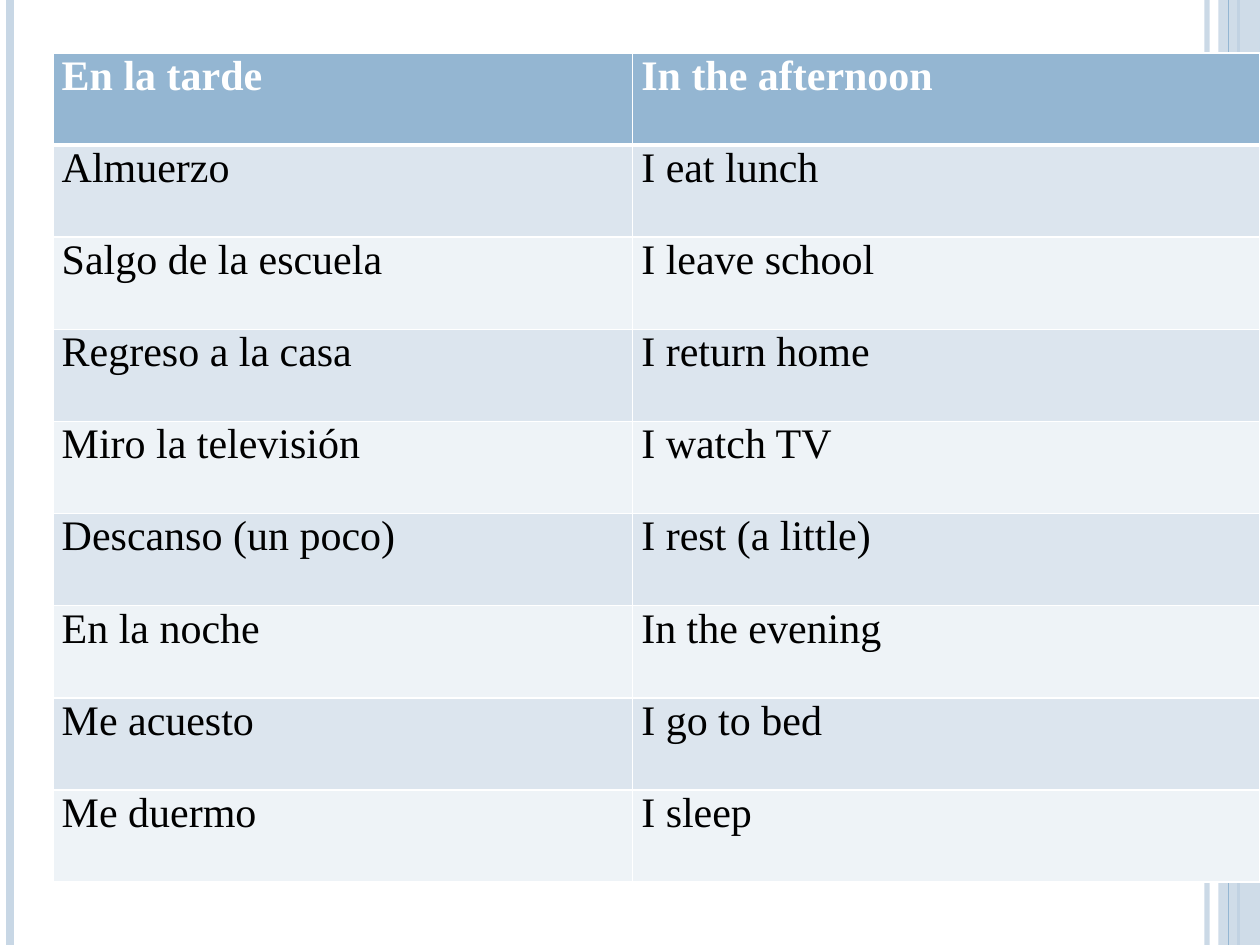
from dataclasses import dataclass

import pptx
import pptx.dml.color
import pptx.enum.shapes
import pptx.oxml
import pptx.oxml.ns
import pptx.oxml.xmlchemy
import pptx.util
from pptx.util import Inches


@dataclass(frozen=True)
class Theme:
    font: str = "Times New Roman"
    size: float = 24
    blue: str = "94B6D2"
    pale: str = "C8D7E5"
    dark: str = "DCE5EE"
    light: str = "EEF3F7"
    white: str = "FFFFFF"
    black: str = "000000"
    thin: float = 1
    thick: float = 3


@dataclass(frozen=True)
class Stripe:
    x: float
    color: str
    width: float
    alpha: int = 100


THEME = Theme()
HIGH = 7.5
BACK = [
    Stripe(9.58, THEME.pale, 3, 93),
    Stripe(0.08, THEME.pale, 4.5),
    Stripe(9.83, THEME.blue, 1.5),
]
FRONT = Stripe(9.75, THEME.blue, 0.75)
WORDS = [
    ("En la tarde", "In the afternoon"),
    ("Almuerzo", "I eat lunch"),
    ("Salgo de la escuela", "I leave school"),
    ("Regreso a la casa", "I return home"),
    ("Miro la televisión", "I watch TV"),
    ("Descanso (un poco)", "I rest (a little)"),
    ("En la noche", "In the evening"),
    ("Me acuesto", "I go to bed"),
    ("Me duermo", "I sleep"),
]
COLS = (4.6, 4.98)


def rgb(color: str) -> pptx.dml.color.RGBColor:
    return pptx.dml.color.RGBColor.from_string(color)


def fade(shape, alpha: int) -> None:
    """Set the opacity, in percent, of the shape's first colour."""
    color = next(shape._element.spPr.iter(pptx.oxml.ns.qn("a:srgbClr")))
    node = pptx.oxml.xmlchemy.OxmlElement("a:alpha")
    node.set("val", str(alpha * 1000))
    color.append(node)


def draw_stripe(slide, stripe: Stripe) -> None:
    x = Inches(stripe.x)
    line = slide.shapes.add_connector(
        pptx.enum.shapes.MSO_CONNECTOR.STRAIGHT, x, 0, x, Inches(HIGH))
    line.line.color.rgb = rgb(stripe.color)
    line.line.width = pptx.util.Pt(stripe.width)
    line._element.spPr.append(pptx.oxml.xmlchemy.OxmlElement("a:effectLst"))
    if stripe.alpha < 100:
        fade(line, stripe.alpha)


def draw_band(slide) -> None:
    band = slide.shapes.add_shape(
        pptx.enum.shapes.MSO_SHAPE.RECTANGLE,
        Inches(9.67), 0, Inches(0.33), Inches(HIGH))
    band.shadow.inherit = False
    band.fill.solid()
    band.fill.fore_color.rgb = rgb(THEME.pale)
    band.line.fill.background()
    fade(band, 87)


def add_edge(cell, side: str, width: float) -> None:
    ns = pptx.oxml.ns.nsdecls("a")
    cell._tc.get_or_add_tcPr().append(pptx.oxml.parse_xml(
        f'<a:ln{side} {ns} w="{int(pptx.util.Pt(width))}"><a:solidFill>'
        f'<a:srgbClr val="{THEME.white}"/></a:solidFill></a:ln{side}>'))


def fill_cell(cell, text: str, row: int) -> None:
    head = row == 0
    cell.margin_left = cell.margin_right = Inches(0.07)
    cell.margin_top = cell.margin_bottom = 0
    for side in "LRTB":
        rule = (row, side) in ((0, "B"), (1, "T"))
        add_edge(cell, side, THEME.thick if rule else THEME.thin)
    cell.fill.solid()
    shade = THEME.dark if row % 2 else THEME.light
    cell.fill.fore_color.rgb = rgb(THEME.blue if head else shade)
    run = cell.text_frame.paragraphs[0].add_run()
    run.text = text
    run.font.name = THEME.font
    run.font.size = pptx.util.Pt(THEME.size)
    run.font.bold = head
    run.font.color.rgb = rgb(THEME.white if head else THEME.black)


def draw_table(slide) -> None:
    high = Inches(6.58)
    table = slide.shapes.add_table(
        len(WORDS), len(COLS), Inches(0.42), Inches(0.42),
        Inches(sum(COLS)), high).table
    for col, width in zip(table.columns, COLS):
        col.width = Inches(width)
    for i, pair in enumerate(WORDS):
        table.rows[i].height = high // len(WORDS)
        for j, text in enumerate(pair):
            fill_cell(table.cell(i, j), text, i)


def main() -> None:
    deck = pptx.Presentation()
    deck.slide_width, deck.slide_height = Inches(10), Inches(HIGH)
    slide = deck.slides.add_slide(deck.slide_layouts[6])
    slide.background.fill.solid()
    slide.background.fill.fore_color.rgb = rgb(THEME.white)
    for stripe in BACK:
        draw_stripe(slide, stripe)
    draw_band(slide)
    draw_stripe(slide, FRONT)
    draw_table(slide)
    deck.save("out.pptx")


if __name__ == "__main__":
    main()
